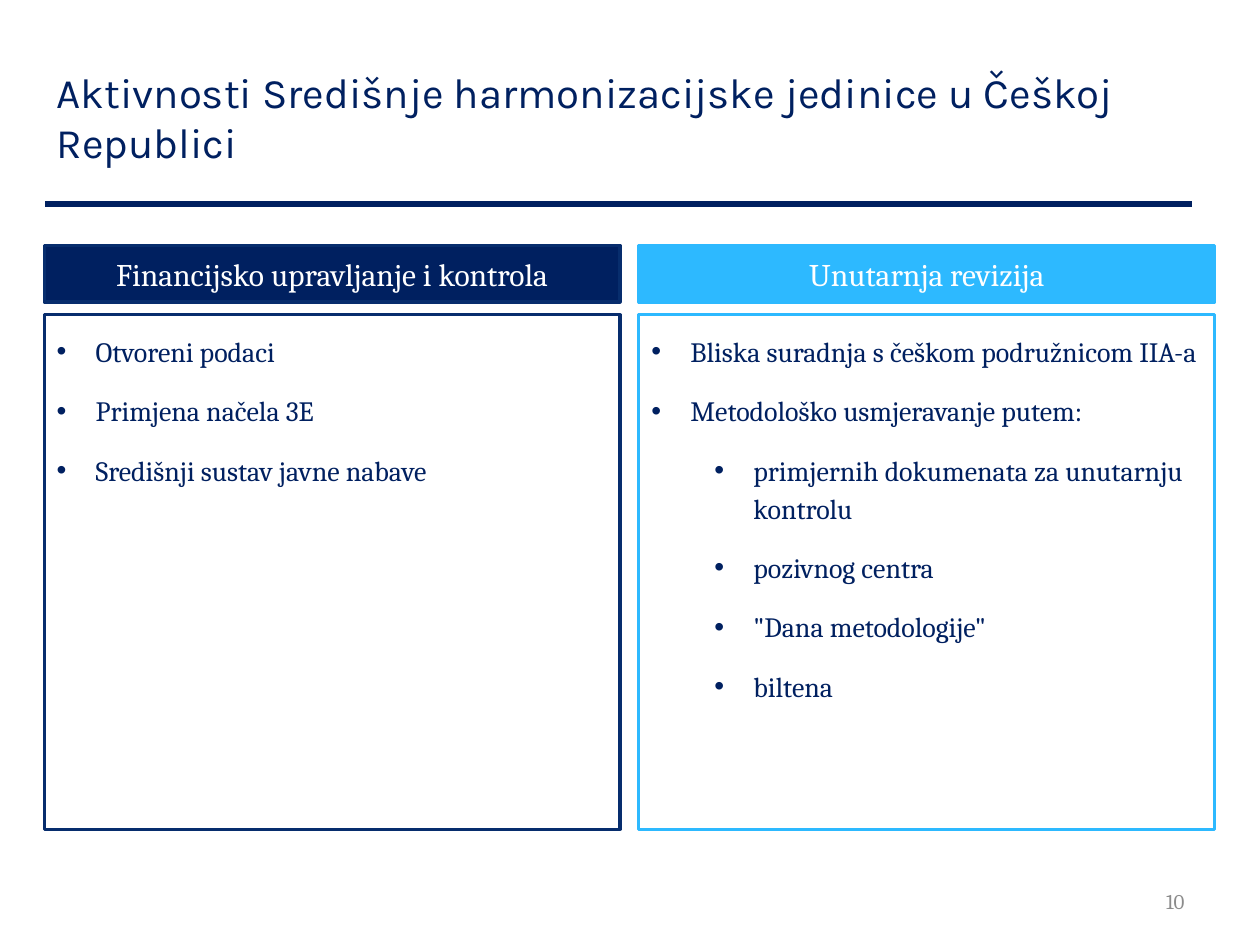
from dataclasses import dataclass

from lxml import etree
from pptx import Presentation
from pptx import util as u
from pptx.dml.color import RGBColor
from pptx.enum import shapes, text
from pptx.oxml import ns


@dataclass(frozen=True)
class Theme:
    navy: RGBColor = RGBColor(0x00, 0x20, 0x60)
    navy_border: RGBColor = RGBColor(0x07, 0x2D, 0x6D)
    sky: RGBColor = RGBColor(0x2D, 0xB9, 0xFF)
    white: RGBColor = RGBColor(0xFF, 0xFF, 0xFF)
    gray: RGBColor = RGBColor(0x8C, 0x8C, 0x8C)
    heading_font: str = "Karla"
    body_font: str = "Cambria"
    title_size: int = 24
    header_size: int = 18
    body_size: int = 16
    number_size: int = 12


theme = Theme()


def add_text(paragraph, words, font, size, color, alignment):
    paragraph.alignment = alignment
    run = paragraph.add_run()
    run.text = words
    run.font.name = font
    run.font.size = u.Pt(size)
    run.font.color.rgb = color


def add_bullet(paragraph, margin, hanging):
    properties = paragraph._p.get_or_add_pPr()
    properties.set("marL", str(margin))
    properties.set("indent", str(-hanging))
    etree.SubElement(properties, ns.qn("a:buFont"), typeface="Arial")
    etree.SubElement(properties, ns.qn("a:buChar"), char="•")


presentation = Presentation()
presentation.slide_width = u.Cm(25.4)
presentation.slide_height = u.Cm(19.05)
slide = presentation.slides.add_slide(presentation.slide_layouts[6])

rule = slide.shapes.add_connector(
    shapes.MSO_CONNECTOR.STRAIGHT, u.Cm(0.91), u.Cm(4.11), u.Cm(24.03), u.Cm(4.11)
)
rule.line.color.rgb = theme.navy
rule.line.width = u.Pt(3)
etree.SubElement(rule._element.spPr, ns.qn("a:effectLst"))

labels = [
    ("Aktivnosti Središnje harmonizacijske jedinice u Češkoj Republici",
     (0.89, 0.76, 23.6, 3.18), theme.heading_font, theme.title_size, theme.navy, text.PP_ALIGN.LEFT),
    ("10", (18.21, 17.65, 5.92, 1.02), theme.body_font, theme.number_size, theme.gray,
     text.PP_ALIGN.RIGHT),
]
for words, bounds, font, size, color, alignment in labels:
    frame = slide.shapes.add_textbox(*map(u.Cm, bounds)).text_frame
    frame.word_wrap = True
    frame.vertical_anchor = text.MSO_ANCHOR.MIDDLE
    add_text(frame.paragraphs[0], words, font, size, color, alignment)

columns = [
    ("Financijsko upravljanje i kontrola", theme.navy, theme.navy_border, [
        (0, "Otvoreni podaci"),
        (0, "Primjena načela 3E"),
        (0, "Središnji sustav javne nabave"),
    ]),
    ("Unutarnja revizija", theme.sky, theme.sky, [
        (0, "Bliska suradnja s češkom podružnicom IIA-a"),
        (0, "Metodološko usmjeravanje putem:"),
        (1, "primjernih dokumenata za unutarnju kontrolu"),
        (1, "pozivnog centra"),
        (1, '"Dana metodologije"'),
        (1, "biltena"),
    ]),
]
column_left, column_width, column_pitch = 0.89, 11.61, 11.99
hanging, level_step = 0.79, 1.27

for index, (heading, fill, border, items) in enumerate(columns):
    left = u.Cm(column_left + index * column_pitch)
    header, body = [
        slide.shapes.add_shape(
            shapes.MSO_SHAPE.RECTANGLE, left, u.Cm(top), u.Cm(column_width), u.Cm(height)
        )
        for top, height in ((4.95, 1.14), (6.35, 10.37))
    ]
    for shape in (header, body):
        shape.shadow.inherit = False
        shape.line.color.rgb = border
        shape.line.width = u.Pt(1.75)
        shape.text_frame.word_wrap = True

    header.fill.solid()
    header.fill.fore_color.rgb = fill
    header.text_frame.vertical_anchor = text.MSO_ANCHOR.MIDDLE
    add_text(header.text_frame.paragraphs[0], heading, theme.body_font,
             theme.header_size, theme.white, text.PP_ALIGN.CENTER)

    body.fill.background()
    frame = body.text_frame
    frame.vertical_anchor = text.MSO_ANCHOR.TOP
    frame.margin_top = frame.margin_bottom = u.Cm(0.3)
    for position, (level, words) in enumerate(items):
        paragraph = frame.add_paragraph() if position else frame.paragraphs[0]
        paragraph.level = level
        paragraph.line_spacing = 1.14
        paragraph.space_before = paragraph.space_after = u.Pt(6)
        add_bullet(paragraph, u.Cm(hanging + level * level_step), u.Cm(hanging))
        add_text(paragraph, words, theme.body_font, theme.body_size,
                 theme.navy, text.PP_ALIGN.LEFT)

presentation.save("out.pptx")
